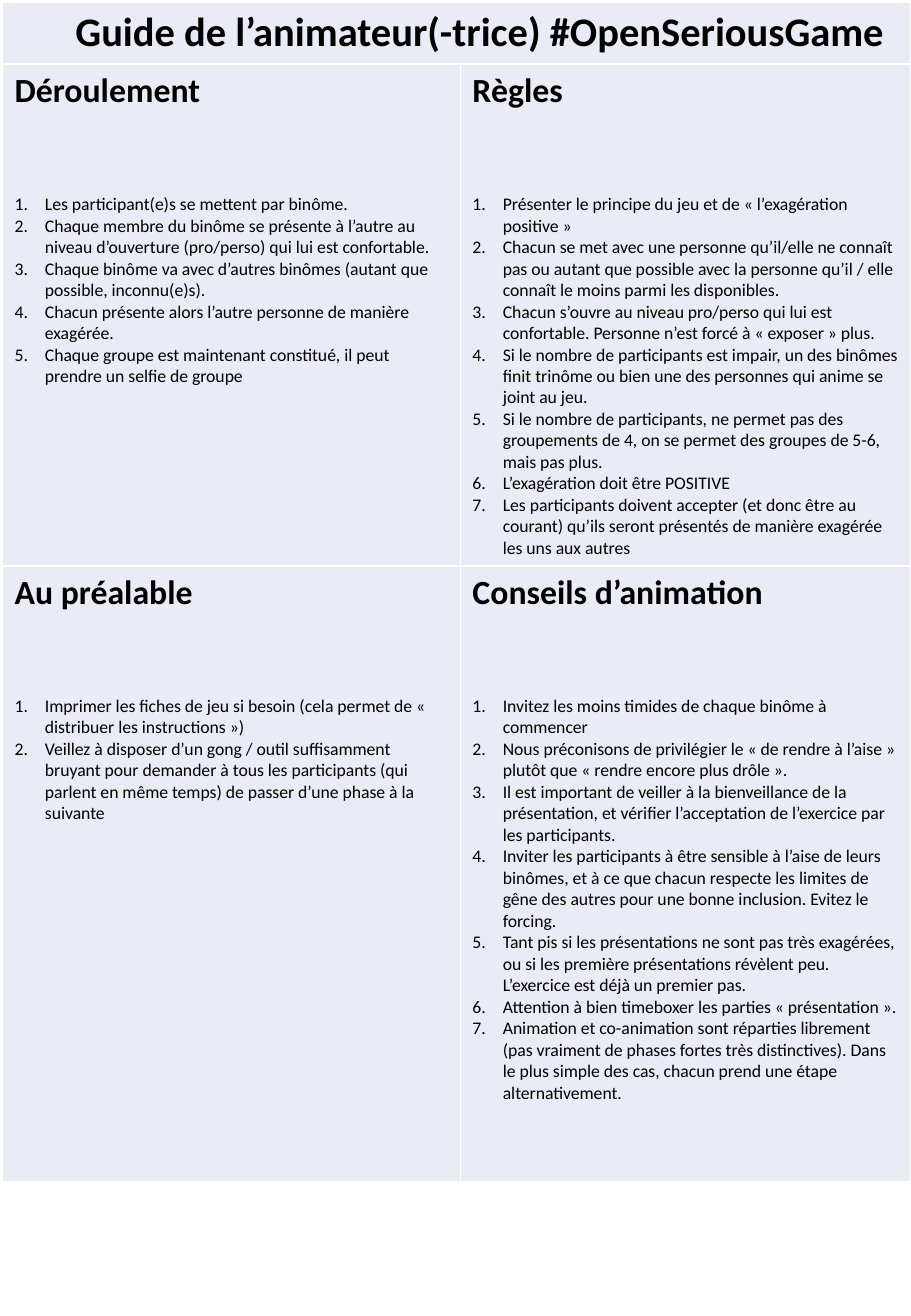
from dataclasses import dataclass

from lxml import etree
from pptx import Presentation
from pptx.dml.color import RGBColor
from pptx.enum.text import PP_ALIGN
from pptx.oxml.ns import qn
from pptx.util import Inches, Pt

CENTER = PP_ALIGN.CENTER
BLANK_LAYOUT = 6


@dataclass(frozen=True)
class Theme:
    font: str = "Calibri"
    text: RGBColor = RGBColor(0x00, 0x00, 0x00)
    cell: RGBColor = RGBColor(0xE9, 0xEB, 0xF5)
    border: str = "FFFFFF"
    border_width: float = 1
    title_size: float = 24
    heading_size: float = 20
    body_size: float = 10.5
    heading_gap: float = 48.8


# Content
TITLE = "Guide de l’animateur(-trice) #OpenSeriousGame"
SECTIONS = [
    [
        ("Déroulement", [
            "Les participant(e)s se mettent par binôme.",
            "Chaque membre du binôme se présente à l’autre au niveau d’ouverture (pro/perso) qui lui est confortable.",
            "Chaque binôme va avec d’autres binômes (autant que possible, inconnu(e)s).",
            "Chacun présente alors l’autre personne de manière exagérée.",
            "Chaque groupe est maintenant constitué, il peut prendre un selfie de groupe",
        ]),
        ("Règles", [
            "Présenter le principe du jeu et de « l’exagération positive »",
            "Chacun se met avec une personne qu’il/elle ne connaît pas ou autant que possible "
            "avec la personne qu’il / elle connaît le moins parmi les disponibles.",
            "Chacun s’ouvre au niveau pro/perso qui lui est confortable. "
            "Personne n’est forcé à « exposer » plus.",
            "Si le nombre de participants est impair, un des binômes finit trinôme "
            "ou bien une des personnes qui anime se joint au jeu.",
            "Si le nombre de participants, ne permet pas des groupements de 4, "
            "on se permet des groupes de 5-6, mais pas plus.",
            "L’exagération doit être POSITIVE",
            "Les participants doivent accepter (et donc être au courant) "
            "qu’ils seront présentés de manière exagérée les uns aux autres",
        ]),
    ],
    [
        ("Au préalable", [
            "Imprimer les fiches de jeu si besoin (cela permet de « distribuer les instructions »)",
            "Veillez à disposer d’un gong / outil suffisamment bruyant pour demander à tous "
            "les participants (qui parlent en même temps) de passer d’une phase à la suivante",
        ]),
        ("Conseils d’animation", [
            "Invitez les moins timides de chaque binôme à commencer",
            "Nous préconisons de privilégier le « de rendre à l’aise » "
            "plutôt que « rendre encore plus drôle ».",
            "Il est important de veiller à la bienveillance de la présentation, "
            "et vérifier l’acceptation de l’exercice par les participants.",
            "Inviter les participants à être sensible à l’aise de leurs binômes, et à ce que chacun "
            "respecte les limites de gêne des autres pour une bonne inclusion. Evitez le forcing.",
            "Tant pis si les présentations ne sont pas très exagérées, ou si les première "
            "présentations révèlent peu. L’exercice est déjà un premier pas.",
            "Attention à bien timeboxer les parties « présentation ».",
            "Animation et co-animation sont réparties librement (pas vraiment de phases fortes très "
            "distinctives). Dans le plus simple des cas, chacun prend une étape alternativement.",
        ]),
    ],
]
COLUMNS = [3.77, 3.71]
ROWS = [0.5, 4.13, 5.07]


class GuideBuilder:
    def __init__(self, slide, theme):
        self.s = slide
        self.theme = theme

    def table(self, left, top, columns, rows):
        frame = self.s.shapes.add_table(
            len(rows), len(columns), Inches(left), Inches(top),
            Inches(sum(columns)), Inches(sum(rows)))
        table = frame.table
        table.first_row = table.horz_banding = False
        for column, width in zip(table.columns, columns):
            column.width = Inches(width)
        for row, height in zip(table.rows, rows):
            row.height = Inches(height)
        for cell in table.iter_cells():
            self.style_cell(cell)
        return table

    def style_cell(self, cell):
        tc_pr = cell._tc.get_or_add_tcPr()
        for side in ("a:lnL", "a:lnR", "a:lnT", "a:lnB"):
            line = etree.SubElement(tc_pr, qn(side), w=str(Pt(self.theme.border_width)))
            fill = etree.SubElement(line, qn("a:solidFill"))
            etree.SubElement(fill, qn("a:srgbClr"), val=self.theme.border)
        cell.fill.solid()
        cell.fill.fore_color.rgb = self.theme.cell

    def run(self, p, text, size, bold=False):
        r = p.add_run()
        r.text = text
        r.font.name = self.theme.font
        r.font.size = Pt(size)
        r.font.bold = bold
        r.font.color.rgb = self.theme.text

    def title(self, cell, text):
        p = cell.text_frame.paragraphs[0]
        p.alignment = CENTER
        p.level = 1
        p._p.get_or_add_pPr().set("marL", str(Inches(0.38)))
        self.run(p, text, self.theme.title_size, bold=True)

    def section(self, cell, heading, items):
        tf = cell.text_frame
        p = tf.paragraphs[0]
        p.space_after = Pt(self.theme.heading_gap)
        self.run(p, heading, self.theme.heading_size, bold=True)
        for item in items:
            self.numbered_item(tf.add_paragraph(), item)

    def numbered_item(self, p, text):
        p_pr = p._p.get_or_add_pPr()
        p_pr.set("marL", str(Inches(0.25)))
        p_pr.set("indent", str(Inches(-0.25)))
        etree.SubElement(p_pr, qn("a:buFont"), typeface="+mj-lt")
        etree.SubElement(p_pr, qn("a:buAutoNum"), type="arabicPeriod")
        self.run(p, text, self.theme.body_size)


def main():
    prs = Presentation()
    prs.slide_width = Inches(7.5)
    prs.slide_height = Inches(10.83)
    s = prs.slides.add_slide(prs.slide_layouts[BLANK_LAYOUT])
    guide = GuideBuilder(s, Theme())

    # Title row across both columns
    table = guide.table(0.02, 0.02, COLUMNS, ROWS)
    table.cell(0, 0).merge(table.cell(0, 1))
    guide.title(table.cell(0, 0), TITLE)

    # Four numbered sections
    for row, sections in enumerate(SECTIONS, start=1):
        for col, (heading, items) in enumerate(sections):
            guide.section(table.cell(row, col), heading, items)

    prs.save("out.pptx")


if __name__ == "__main__":
    main()
